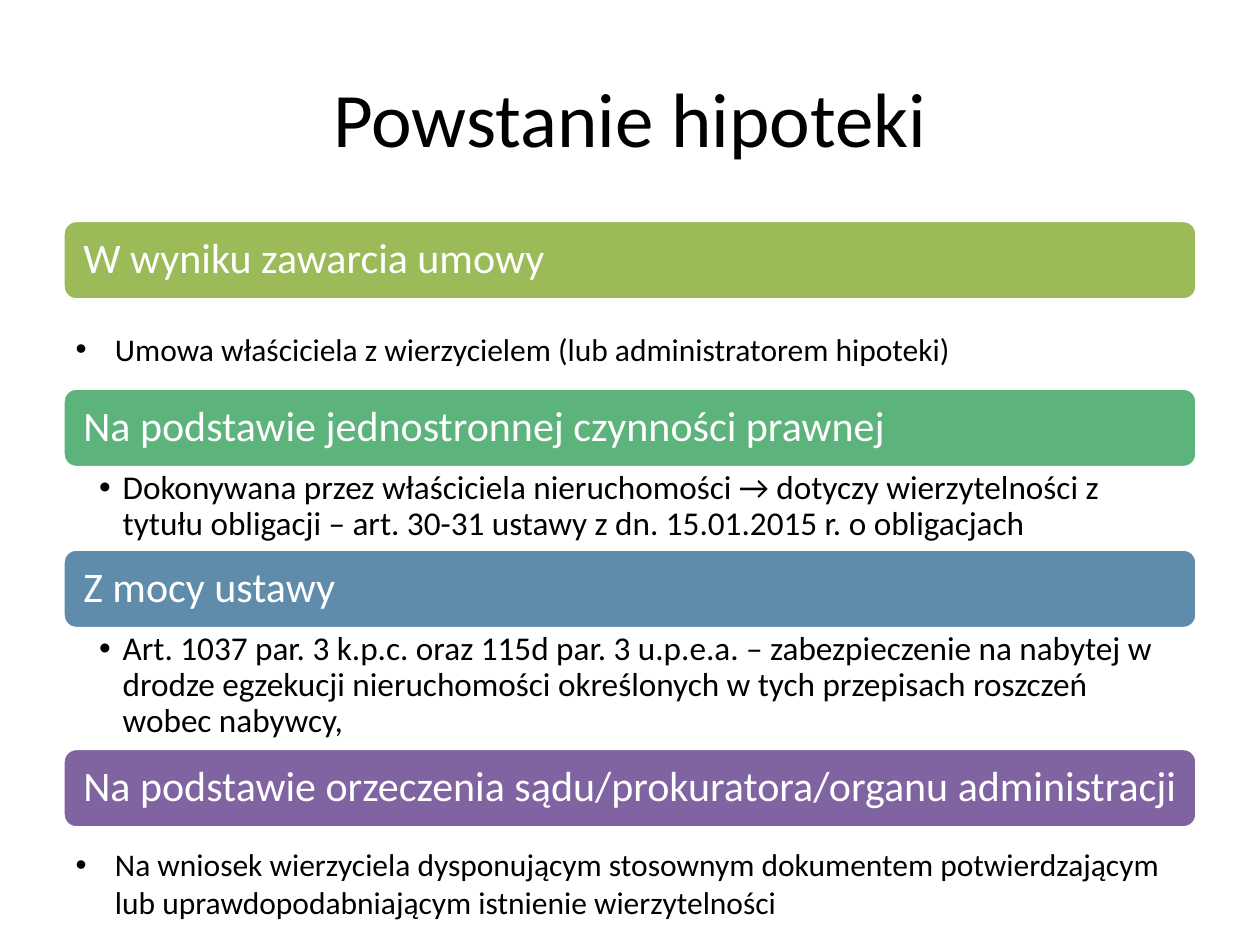
import pptx
import pptx.dml.color
import pptx.enum.shapes
import pptx.enum.text
import pptx.oxml
import pptx.oxml.ns
import pptx.util

Pt = pptx.util.Pt
ANCHOR = pptx.enum.text.MSO_ANCHOR
ALIGN = pptx.enum.text.PP_ALIGN

COLORS = {
    "text": "000000",
    "light": "FFFFFF",
    "green": "9BBB59",
    "teal": "5CB37C",
    "blue": "608CAB",
    "purple": "8064A2",
}
LEFT, WIDTH, BAR_HEIGHT = 36, 648, 45.4

# Two list styles: plain and nested under the bar
PLAIN = {"size": 18, "indent": 22.5, "line_spacing": 1, "level": 0,
         "margins": (7.2, 3.6, 7.2, 3.6)}
NESTED = {"size": 19, "indent": 13.5, "line_spacing": 0.9, "level": 1,
          "margins": (20.6, 1.9, 13.5, 1.9)}

# Heading, colour, bar top, list text, list top, list height, list style
SECTIONS = [
    ("W wyniku zawarcia umowy", "green", 126,
     "Umowa właściciela z wierzycielem (lub administratorem hipoteki)",
     185, 29, PLAIN),
    ("Na podstawie jednostronnej czynności prawnej", "teal", 221.8,
     "Dokonywana przez właściciela nieruchomości → dotyczy wierzytelności z "
     "tytułu obligacji – art. 30-31 ustawy z dn. 15.01.2015 r. o obligacjach",
     267.2, 46.6, NESTED),
    ("Z mocy ustawy", "blue", 313.8,
     "Art. 1037 par. 3 k.p.c. oraz 115d par. 3 u.p.e.a. – zabezpieczenie na "
     "nabytej w drodze egzekucji nieruchomości określonych w tych przepisach "
     "roszczeń wobec nabywcy,",
     359.2, 68.5, NESTED),
    ("Na podstawie orzeczenia sądu/prokuratora/organu administracji",
     "purple", 427.7,
     "Na wniosek wierzyciela dysponującym stosownym dokumentem "
     "potwierdzającym lub uprawdopodabniającym istnienie wierzytelności",
     479.5, 51, PLAIN),
]


def rgb(name):
    return pptx.dml.color.RGBColor.from_string(COLORS[name])


def place(shape, left, top, width, height):
    shape.left, shape.top = Pt(left), Pt(top)
    shape.width, shape.height = Pt(width), Pt(height)


def add_bullet(paragraph, indent):
    properties = paragraph._p.get_or_add_pPr()
    properties.set("marL", str(Pt(indent)))
    properties.set("indent", str(-Pt(indent)))
    for tag, key, value in (("a:buFont", "typeface", "Arial"),
                            ("a:buChar", "char", "•")):
        element = pptx.oxml.parse_xml(
            f'<{tag} {pptx.oxml.ns.nsdecls("a")} {key}="{value}"/>')
        properties.append(element)


def write_text(shape, text, size, color="text", align=ALIGN.LEFT,
               anchor=ANCHOR.TOP, margins=(7.2, 3.6, 7.2, 3.6),
               line_spacing=1, indent=None, level=0):
    frame = shape.text_frame
    frame.word_wrap = True
    frame.auto_size = pptx.enum.text.MSO_AUTO_SIZE.NONE
    frame.vertical_anchor = anchor
    (frame.margin_left, frame.margin_top,
     frame.margin_right, frame.margin_bottom) = map(Pt, margins)
    paragraph = frame.paragraphs[0]
    paragraph.text = text
    paragraph.level = level
    if indent is not None:
        add_bullet(paragraph, indent)
    paragraph.alignment = align
    paragraph.line_spacing = line_spacing
    paragraph.space_before = Pt(0)
    font = paragraph.runs[0].font
    font.name, font.size, font.bold = "Calibri", Pt(size), False
    font.color.rgb = rgb(color)


def add_bar(slide, text, color, top):
    bar = slide.shapes.add_shape(
        pptx.enum.shapes.MSO_SHAPE.ROUNDED_RECTANGLE,
        Pt(LEFT), Pt(top), Pt(WIDTH), Pt(BAR_HEIGHT))
    bar.shadow.inherit = False
    bar.fill.solid()
    bar.fill.fore_color.rgb = rgb(color)
    bar.line.color.rgb = rgb("light")
    bar.line.width = Pt(2)
    write_text(bar, text, size=24, color="light", anchor=ANCHOR.MIDDLE,
               margins=(9.4, 7.2, 9.4, 7.2), line_spacing=0.9)


def fill_list(placeholder, text, top, height, style):
    place(placeholder, LEFT, top, WIDTH, height)
    write_text(placeholder, text, **style)


def main():
    presentation = pptx.Presentation()
    presentation.slide_width, presentation.slide_height = Pt(720), Pt(540)
    # The comparison layout offers a title and four body placeholders
    layout = presentation.slide_layouts.get_by_name("Comparison")
    slide = presentation.slides.add_slide(layout)

    # Title
    title = slide.shapes.title
    place(title, LEFT, 21.6, WIDTH, 90)
    write_text(title, "Powstanie hipoteki", size=44, align=ALIGN.CENTER,
               anchor=ANCHOR.MIDDLE)

    # Coloured headings, each with its list
    bodies = [shape for shape in slide.placeholders
              if 1 <= shape.placeholder_format.idx <= 4]
    for body, section in zip(bodies, SECTIONS):
        heading, color, bar_top, text, top, height, style = section
        add_bar(slide, heading, color, bar_top)
        fill_list(body, text, top, height, style)

    presentation.save("out.pptx")


if __name__ == "__main__":
    main()
